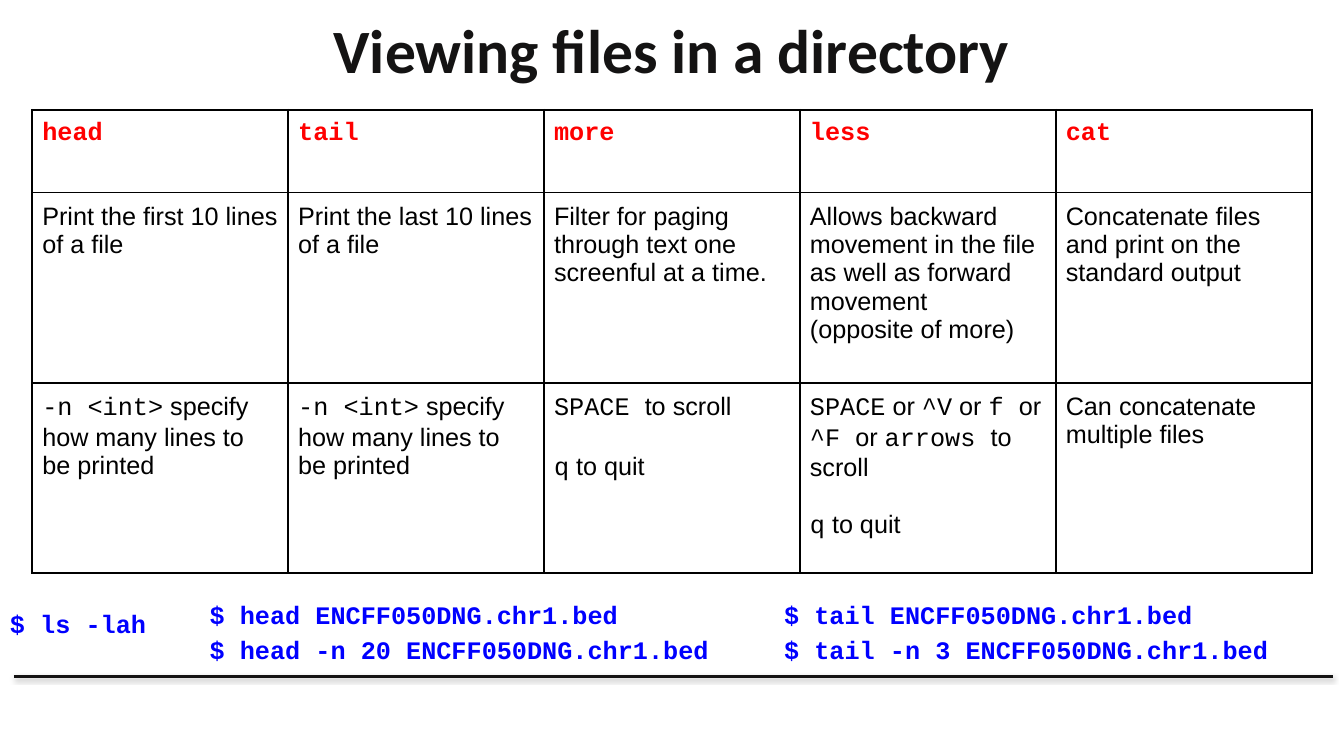
from dataclasses import dataclass

from lxml.etree import SubElement
from pptx import Presentation
from pptx.dml.color import RGBColor
from pptx.enum.text import MSO_ANCHOR, PP_ALIGN
from pptx.enum.shapes import MSO_CONNECTOR
from pptx.oxml.ns import qn
from pptx.slide import Slide
from pptx.table import _Cell
from pptx.text.text import Font, TextFrame
from pptx.util import Pt

CODE_FONT = "Courier New"
BODY_FONT = "Arial"
TEXT_SIZE = 18
INSET = 7.2
BLANK_LINE = 20.7
INK = "141313"
BLACK = "000000"


@dataclass(frozen=True)
class TextStyle:
    name: str
    size: float
    color: str
    bold: bool = False


@dataclass(frozen=True)
class TextBlock:
    left: float
    top: float
    width: float
    height: float
    lines: tuple[str, ...]
    style: TextStyle
    vertical_inset: float = INSET
    line_spacing: float = 1.0
    alignment: PP_ALIGN = PP_ALIGN.LEFT
    anchor: MSO_ANCHOR = MSO_ANCHOR.TOP


@dataclass(frozen=True)
class Command:
    name: str
    purpose: tuple[str, ...]
    usage: tuple[str, ...]


TITLE_STYLE = TextStyle("Calibri", 44, INK, True)
HEADING_STYLE = TextStyle(CODE_FONT, TEXT_SIZE, "FF0000", True)
BODY_STYLE = TextStyle(BODY_FONT, TEXT_SIZE, BLACK)
EXAMPLE_STYLE = TextStyle(CODE_FONT, TEXT_SIZE, "0000FF", True)

LINE_COUNT = "`-n <int>` specify how many lines to be printed"
QUIT = "`q` to quit"

COMMANDS = (
    Command("head", ("Print the first 10 lines of a file",), (LINE_COUNT,)),
    Command("tail", ("Print the last 10 lines of a file",), (LINE_COUNT,)),
    Command(
        "more",
        ("Filter for paging through text one screenful at a time.",),
        ("`SPACE `to scroll", QUIT),
    ),
    Command(
        "less",
        (
            "Allows backward movement in the file as well as forward movement",
            "(opposite of more)",
        ),
        ("`SPACE` or `^V` or `f `or `^F `or `arrows `to scroll", QUIT),
    ),
    Command(
        "cat",
        ("Concatenate files and print on the standard output",),
        ("Can concatenate multiple files",),
    ),
)

TEXT_BLOCKS = (
    TextBlock(48, 0.7, 864, 69, ("Viewing files in a directory",), TITLE_STYLE,
              vertical_inset=3.6, alignment=PP_ALIGN.CENTER, anchor=MSO_ANCHOR.MIDDLE),
    TextBlock(0, 427, 142.6, 40, ("$ ls -lah",), EXAMPLE_STYLE),
    TextBlock(142.6, 417.6, 419, 60.5,
              ("$ head ENCFF050DNG.chr1.bed", "$ head -n 20 ENCFF050DNG.chr1.bed"),
              EXAMPLE_STYLE, line_spacing=1.15),
    TextBlock(553, 417.6, 407, 60.5,
              ("$ tail ENCFF050DNG.chr1.bed", "$ tail -n 3 ENCFF050DNG.chr1.bed"),
              EXAMPLE_STYLE, line_spacing=1.15),
)


def hex_color(value: str) -> RGBColor:
    return RGBColor.from_string(value)


def apply_style(font: Font, style: TextStyle) -> None:
    font.name = style.name
    font.size = Pt(style.size)
    font.bold = style.bold
    font.color.rgb = hex_color(style.color)


def write_lines(frame: TextFrame, lines: tuple[str, ...], style: TextStyle,
                gap: float = 0, line_spacing: float = 1.0,
                alignment: PP_ALIGN = PP_ALIGN.LEFT) -> None:
    for index, line in enumerate(lines):
        paragraph = frame.add_paragraph() if index else frame.paragraphs[0]
        paragraph.alignment = alignment
        paragraph.line_spacing = line_spacing
        paragraph.space_before = Pt(gap if index else 0)
        apply_style(paragraph.font, style)
        for position, part in enumerate(line.split("`")):
            if part:
                run = paragraph.add_run()
                run.text = part
                if position % 2:
                    run.font.name = CODE_FONT


def add_text_block(slide: Slide, block: TextBlock) -> None:
    shape = slide.shapes.add_textbox(
        Pt(block.left), Pt(block.top), Pt(block.width), Pt(block.height))
    frame = shape.text_frame
    frame.word_wrap = True
    frame.vertical_anchor = block.anchor
    frame.margin_left = frame.margin_right = Pt(INSET)
    frame.margin_top = frame.margin_bottom = Pt(block.vertical_inset)
    write_lines(frame, block.lines, block.style,
                line_spacing=block.line_spacing, alignment=block.alignment)


def format_cell(cell: _Cell) -> None:
    cell.margin_left = cell.margin_right = Pt(INSET)
    cell.margin_top = cell.margin_bottom = Pt(INSET)
    properties = cell._tc.get_or_add_tcPr()
    for side in ("lnL", "lnR", "lnT", "lnB"):
        border = SubElement(properties, qn(f"a:{side}"), w=str(Pt(1.5)))
        fill = SubElement(border, qn("a:solidFill"))
        SubElement(fill, qn("a:srgbClr"), val=BLACK)
    cell.fill.background()


def add_command_table(slide: Slide) -> None:
    row_heights = (59, 136, 136)
    column_width = 182.8
    table = slide.shapes.add_table(
        len(row_heights), len(COMMANDS), Pt(23), Pt(78.5),
        Pt(column_width * len(COMMANDS)), Pt(sum(row_heights))).table
    table.first_row = table.horz_banding = False
    for row, height in zip(table.rows, row_heights):
        row.height = Pt(height)
    for column_index, command in enumerate(COMMANDS):
        table.columns[column_index].width = Pt(column_width)
        contents = (
            ((command.name,), HEADING_STYLE, 0),
            (command.purpose, BODY_STYLE, 0),
            (command.usage, BODY_STYLE, BLANK_LINE),
        )
        for row_index, (lines, style, gap) in enumerate(contents):
            cell = table.cell(row_index, column_index)
            format_cell(cell)
            write_lines(cell.text_frame, lines, style, gap)


def add_footer_rule(slide: Slide) -> None:
    rule = slide.shapes.add_connector(
        MSO_CONNECTOR.STRAIGHT, Pt(10), Pt(483), Pt(952), Pt(483))
    rule.line.color.rgb = hex_color(INK)
    rule.line.width = Pt(2)
    effects = SubElement(rule._element.spPr, qn("a:effectLst"))
    shadow = SubElement(effects, qn("a:outerShdw"), blurRad=str(Pt(3.1)),
                        dist=str(Pt(1.6)), dir="5400000", rotWithShape="0")
    color = SubElement(shadow, qn("a:srgbClr"), val=BLACK)
    SubElement(color, qn("a:alpha"), val="38000")


def main() -> None:
    presentation = Presentation()
    presentation.slide_width = Pt(960)
    presentation.slide_height = Pt(540)
    slide = presentation.slides.add_slide(presentation.slide_layouts[6])
    add_footer_rule(slide)
    add_command_table(slide)
    for block in TEXT_BLOCKS:
        add_text_block(slide, block)
    presentation.save("out.pptx")


if __name__ == "__main__":
    main()
